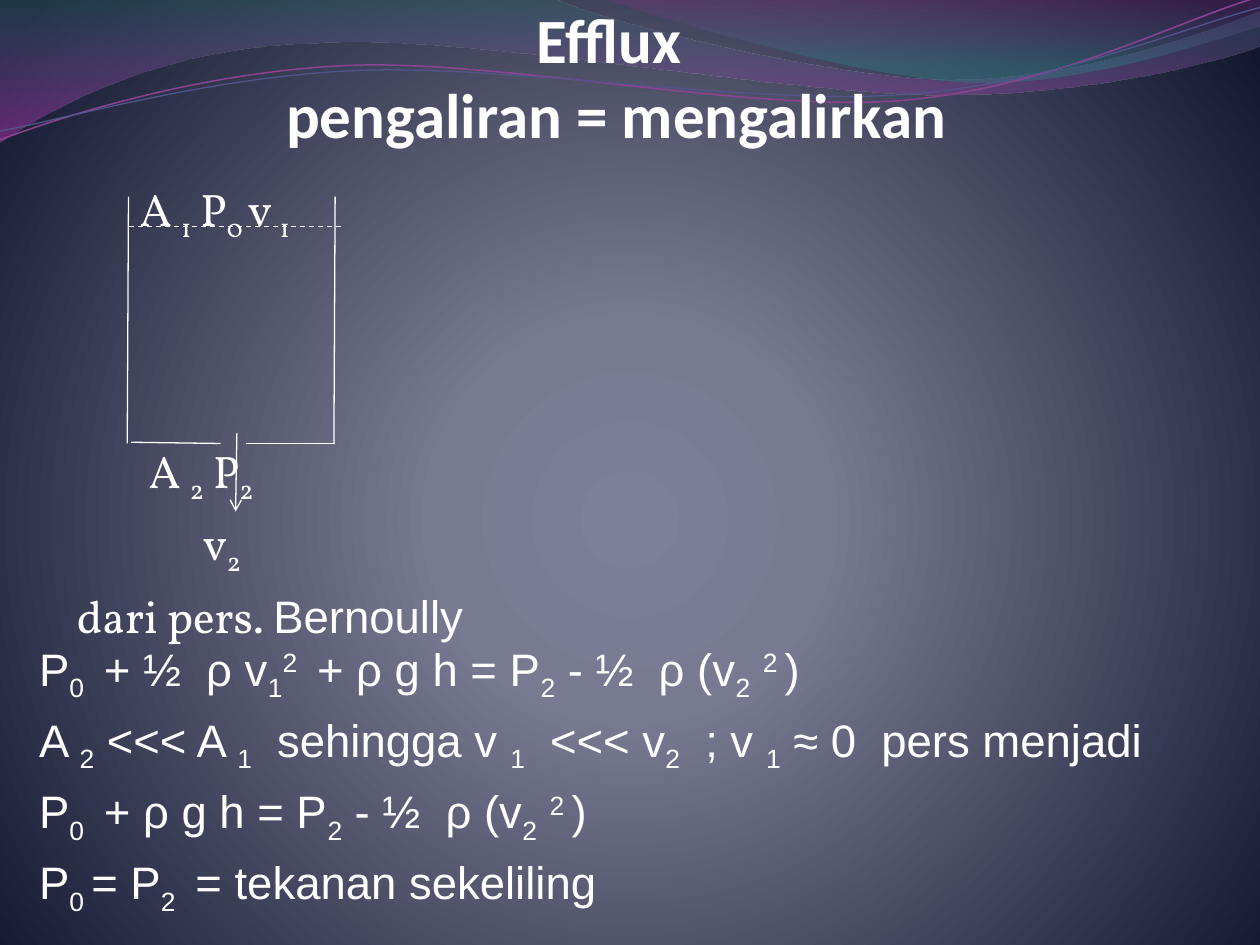
from dataclasses import dataclass

from lxml.etree import SubElement
from pptx import Presentation
from pptx.dml.color import RGBColor
from pptx.enum.dml import MSO_LINE
from pptx.enum.shapes import MSO_CONNECTOR
from pptx.enum.text import PP_ALIGN
from pptx.oxml import parse_xml
from pptx.oxml.ns import nsdecls, qn
from pptx.util import Inches, Pt

COLORS = {
    "text": "FFFFFF", "center": "7D809A", "middle": "787A92", "edge": "13162F",
    "teal": "2D6368", "violet": "A530A9", "plum": "7F2F82", "cyan": "2F7B82",
    "pink": "8D4490", "indigo": "53548A",
}
COLUMNS, ROWS = 10, 7.5
BASELINES = {"_": "-25000", "^": "30000"}
DOWNWARD = '<a:lin ang="5400000" scaled="0"/>'
RADIAL = ('<a:path path="circle"><a:fillToRect l="10000" t="110000" '
          'r="10000" b="100000"/></a:path>')

WIDE_WAVE = [
    [(0, 0)], [(4.4, -0.01)],
    [(4.76, 0.17), (6.64, 0.63), (7.58, 0.63)],
    [(8.53, 0.63), (9.58, 0.26), (10, 0.09)], [(10.01, 0.36)],
    [(9.83, 0.44), (8.7, 0.76), (7.46, 0.75)],
    [(6.22, 0.75), (3.82, 0.28), (2.57, 0.34)],
    [(1.29, 0.36), (0.46, 0.83), (-0.01, 1.13)], [(0, 0)],
]
RIGHT_WAVE = [
    [(4.79, -0.01)],
    [(5.09, 0.11), (6.82, 0.62), (7.69, 0.65)],
    [(8.56, 0.69), (9.61, 0.32), (10, 0.21)], [(10, 0)], [(4.79, -0.01)],
]
PINK_STRAND = [
    [(0, 1.11)],
    [(0.48, 0.93), (1.58, 0.57), (2.77, 0.52)],
    [(3.95, 0.47), (5.93, 0.89), (7.13, 0.8)],
    [(8.33, 0.71), (9.38, 0.15), (9.98, -0.02)],
]
INDIGO_STRAND = [
    [(0, 1.04)],
    [(0.47, 0.96), (1.64, 0.61), (2.83, 0.56)],
    [(4.03, 0.51), (5.97, 0.84), (7.17, 0.75)],
    [(8.36, 0.67), (9.41, 0.21), (10, 0.06)],
]
BODY = [
    ("A |_1| P|_0 |v |_1", "Vollkorn", 0.8, 0),
    ("A |_2| P|_2", "Vollkorn", 0.87, 115.1),
    ("v|_2", "Vollkorn", 1.3, 6.5),
    ("dari pers. |Bernoully", "Vollkorn", 0.3, 2.8),
    ("P|_0 | + ½  ρ v|_1|^2 | + ρ g h = P|_2| - ½  ρ (v|_2| |^2 |)", "Arial", 0, 0),
    ("A |_2| <<< A |_1|  sehingga v |_1|  <<< v|_2|  ; v |_1| ≈ 0  pers menjadi",
     "Arial", 0, 6),
    ("P|_0 | + ρ g h = P|_2| - ½  ρ (v|_2| |^2 |)", "Arial", 0, 6),
    ("P|_0 |= P|_2 | = tekanan sekeliling", "Arial", 0, 6),
]


@dataclass
class Box:
    """A region of the slide, measured in grid columns and rows."""
    left: float
    top: float
    width: float
    height: float

    def point(self, column, row):
        """Return the slide position of a point inside the region."""
        return Inches(self.left + column), Inches(self.top + row)


def color(name):
    """Look up a named colour."""
    return RGBColor.from_string(COLORS[name])


def set_gradient(owner, stops, direction):
    """Replace the solid fill of an element by a gradient."""
    marks = ""
    for place, name, opacity in stops:
        alpha = f'<a:alpha val="{opacity * 1000}"/>' if opacity < 100 else ""
        marks += (f'<a:gs pos="{place * 1000}"><a:srgbClr val="{COLORS[name]}">'
                  f'{alpha}</a:srgbClr></a:gs>')
    gradient = parse_xml(f'<a:gradFill {nsdecls("a")} rotWithShape="1">'
                         f'<a:gsLst>{marks}</a:gsLst>{direction}</a:gradFill>')
    owner.replace(owner.find(qn("a:solidFill")), gradient)


def add_outline(page, box, segments, closed):
    """Draw an outline of straight and cubic segments in a region."""
    first, *others = [box.point(*segment[-1]) for segment in segments]
    builder = page.shapes.build_freeform(*first)
    builder.add_line_segments(others, close=closed)
    outline = builder.convert_to_shape()
    outline.shadow.inherit = False
    straights = list(outline._element.spPr.iter(qn("a:lnTo")))
    for straight, segment in zip(straights, segments[1:]):
        if len(segment) == 3:
            curve = parse_xml(f'<a:cubicBezTo {nsdecls("a")}/>')
            for x, y in (box.point(*control) for control in segment):
                SubElement(curve, qn("a:pt"), x=str(x - outline.left),
                           y=str(y - outline.top))
            straight.getparent().replace(straight, curve)
    return outline


def add_backdrop(page, box):
    """Paint the background, the two waves and the two strands."""
    page.background.fill.solid()
    set_gradient(page.background._cSld.bg.bgPr,
                 [(0, "center", 100), (25, "middle", 100), (100, "edge", 100)], RADIAL)
    waves = [(WIDE_WAVE, [(0, "teal", 45), (100, "violet", 55)]),
             (RIGHT_WAVE, [(0, "plum", 30), (80, "cyan", 45)])]
    for segments, stops in waves:
        wave = add_outline(page, box, segments, True)
        wave.fill.solid()
        wave.line.fill.background()
        set_gradient(wave._element.spPr, stops, DOWNWARD)
    for segments, name, width in [(PINK_STRAND, "pink", 0.85),
                                  (INDIGO_STRAND, "indigo", 0.75)]:
        strand = add_outline(page, box, segments, False)
        strand.fill.background()
        strand.line.color.rgb = color(name)
        strand.line.width = Pt(width)


def add_frame(page, box, top_margin=0):
    """Add a wrapping text box that fills a region."""
    frame = page.shapes.add_textbox(*box.point(0, 0), Inches(box.width),
                                    Inches(box.height)).text_frame
    frame.word_wrap = True
    frame.margin_left = frame.margin_bottom = 0
    frame.margin_right = Inches(0.02)
    frame.margin_top = Inches(top_margin)
    return frame


def style(para, font, size):
    """Set the font of a whole paragraph."""
    para.font.name = font
    para.font.size = Pt(size)
    para.font.color.rgb = color("text")


def add_title(page, box):
    """Write the centred two-line heading."""
    para = add_frame(page, box).paragraphs[0]
    para.text = "Efflux\v pengaliran = mengalirkan"
    para.alignment = PP_ALIGN.CENTER
    style(para, "Calibri", 36)
    para.font.bold = True


def add_body(page, box):
    """Write labels and equations, lowering _ parts and raising ^ parts."""
    frame = add_frame(page, box, 0.12)
    for index, (line, font, indent, gap) in enumerate(BODY):
        para = frame.add_paragraph() if index else frame.paragraphs[0]
        style(para, font, 26)
        para.line_spacing = Pt(34.6)
        para.space_before = Pt(gap)
        para._p.get_or_add_pPr().set("marL", str(Inches(indent)))
        for part in line.split("|"):
            span = para.add_run()
            span.text = part.lstrip("_^")
            if part[0] in BASELINES:
                span.font._element.set("baseline", BASELINES[part[0]])
            if part == "Bernoully":
                span.font.name = "Arial"


def add_line(page, box, start, end, dashed=False, arrow=False):
    """Draw a thin straight line in a region."""
    line = page.shapes.add_connector(MSO_CONNECTOR.STRAIGHT,
                                     *box.point(*start), *box.point(*end))
    line.line.color.rgb = color("text")
    line.line.width = Pt(0.75)
    if dashed:
        line.line.dash_style = MSO_LINE.DASH
    if arrow:
        SubElement(line.line._get_or_add_ln(), qn("a:tailEnd"), type="arrow")
    SubElement(line._element.spPr, qn("a:effectLst"))


def add_tank(page, box):
    """Draw the open tank with its liquid level and outlet."""
    for side in (0, box.width):
        add_line(page, box, (side, 0), (side - 0.01, box.height))
    add_line(page, box, (0, 0.24), (1.71, 0.24), dashed=True)
    add_line(page, box, (0.02, box.height - 0.01), (0.73, box.height))
    add_line(page, box, (0.93, box.height), (box.width, box.height))
    add_line(page, box, (0.86, 1.88), (0.85, 2.5), arrow=True)


def main():
    """Build and save the slide."""
    deck = Presentation()
    deck.slide_width, deck.slide_height = Inches(COLUMNS), Inches(ROWS)
    page = deck.slides.add_slide(deck.slide_layouts[6])
    add_backdrop(page, Box(0, 0, COLUMNS, ROWS))
    add_title(page, Box(0.55, 0, 8.59, 1.41))
    add_body(page, Box(0.31, 1.33, 9.69, 6.17))
    add_tank(page, Box(1.02, 1.56, 1.64, 1.96))
    deck.save("out.pptx")


if __name__ == "__main__":
    main()
